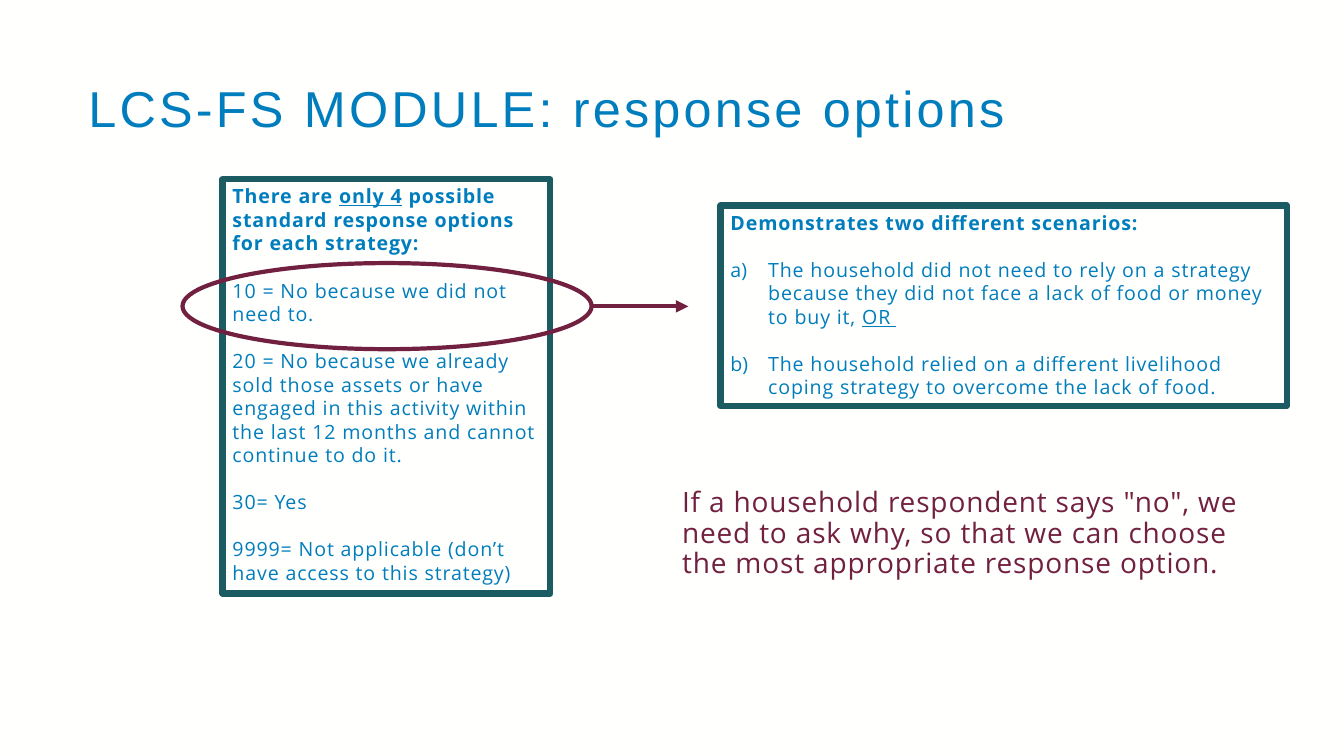
import pptx
import pptx.dml.color
import pptx.enum.dml
import pptx.enum.shapes
import pptx.enum.text
import pptx.oxml
import pptx.oxml.ns
import pptx.util
from pptx.util import Cm, Pt

BLUE = pptx.dml.color.RGBColor(0x00, 0x7D, 0xBC)
TEAL = pptx.dml.color.RGBColor(0x1B, 0x5B, 0x62)
PLUM = pptx.dml.color.RGBColor(0x72, 0x20, 0x40)
PAPER = pptx.dml.color.RGBColor(0xFF, 0xFF, 0xFE)
LINE_GAP = Pt(16.8)
SHAPES = pptx.enum.shapes.MSO_SHAPE

BOLD = {"bold": True}
BOLD_UNDERLINE = {"bold": True, "underline": True}
UNDERLINE = {"underline": True}


def add_drawing_element(parent, tag, **attributes):
    element = pptx.oxml.parse_xml(f"<a:{tag} {pptx.oxml.ns.nsdecls('a')}/>")
    for name, value in attributes.items():
        element.set(name, value)
    parent.append(element)


def write_text(shape, paragraphs, font_name, size, color, tracking, line_spacing=1.0):
    """Write (numbered, runs) paragraphs; each run is a text and its format."""
    frame = shape.text_frame
    frame.word_wrap = True
    frame.vertical_anchor = pptx.enum.text.MSO_ANCHOR.TOP
    for index, (numbered, runs) in enumerate(paragraphs):
        paragraph = frame.add_paragraph() if index else frame.paragraphs[0]
        paragraph.alignment = pptx.enum.text.PP_ALIGN.LEFT
        paragraph.line_spacing = line_spacing
        if index:
            paragraph.space_before = LINE_GAP
        if numbered:
            properties = paragraph._p.get_or_add_pPr()
            properties.set("marL", str(Cm(0.95)))
            properties.set("indent", str(-Cm(0.95)))
            add_drawing_element(properties, "buAutoNum", type="alphaLcParenR")
        for text, run_format in runs:
            run = paragraph.add_run()
            run.text = text
            run.font.color.rgb = color
            values = {"name": font_name, "size": Pt(size), **run_format}
            for name, value in values.items():
                setattr(run.font, name, value)
            run._r.get_or_add_rPr().set("spc", str(tracking))


presentation = pptx.Presentation()
presentation.slide_width = Cm(33.87)
presentation.slide_height = Cm(19.05)
slide = presentation.slides.add_slide(presentation.slide_layouts[6])
slide.background.fill.solid()
slide.background.fill.fore_color.rgb = PAPER

title = slide.shapes.add_textbox(Cm(1.98), Cm(1.98), Cm(30.71), Cm(1.83))
write_text(title, [(False, [("LCS-FS MODULE: response options", {})])],
           "Arial", 36, BLUE, 230, 0.9)

response_options = [
    (False, [("There are ", BOLD), ("only 4", BOLD_UNDERLINE),
             (" possible standard response options for each strategy:", BOLD)]),
    (False, [("10 = No because we did not need to.", {})]),
    (False, [("20 = No because we already sold those assets or have engaged in this "
              "activity within the last 12 months and cannot continue to do it.", {})]),
    (False, [("30= Yes", {})]),
    (False, [("9999= Not applicable (don’t have access to this strategy)", {})]),
]
scenarios = [
    (False, [("Demonstrates two different scenarios:", BOLD)]),
    (True, [("The household did not need to rely on a strategy because they did not "
             "face a lack of food or money to buy it, ", {}), ("OR ", UNDERLINE)]),
    (True, [("The household relied on a different livelihood coping strategy to "
             "overcome the lack of food.", {})]),
]

outlines = [
    (SHAPES.RECTANGLE, (5.61, 4.52, 8.26, 10.44), TEAL, 4.5, response_options),
    (SHAPES.RECTANGLE, (18.16, 5.18, 14.27, 5.05), TEAL, 4.5, scenarios),
    (SHAPES.OVAL, (4.6, 6.63, 10.31, 2.17), PLUM, 3, []),
]
for kind, place, color, width, paragraphs in outlines:
    shape = slide.shapes.add_shape(kind, *map(Cm, place))
    shape.shadow.inherit = False
    shape.fill.background()
    shape.line.color.rgb = color
    shape.line.width = Pt(width)
    write_text(shape, paragraphs, "Open Sans", 14, BLUE, 60)

arrow = slide.shapes.add_connector(
    pptx.enum.shapes.MSO_CONNECTOR.STRAIGHT, Cm(14.91), Cm(7.72), Cm(17.35), Cm(7.72))
arrow.line.color.rgb = PLUM
arrow.line.width = Pt(3)
add_drawing_element(arrow.line._get_or_add_ln(), "tailEnd", type="triangle")
add_drawing_element(arrow._element.spPr, "effectLst")

advice = slide.shapes.add_textbox(Cm(16.94), Cm(12.19), Cm(15.29), Cm(2.57))
write_text(advice, [(False, [(
    'If a household respondent says "no", we need to ask why, so that we can choose '
    "the most appropriate response option.", {})])], "Open Sans", 20, PLUM, 60, 0.9)

presentation.save("out.pptx")
